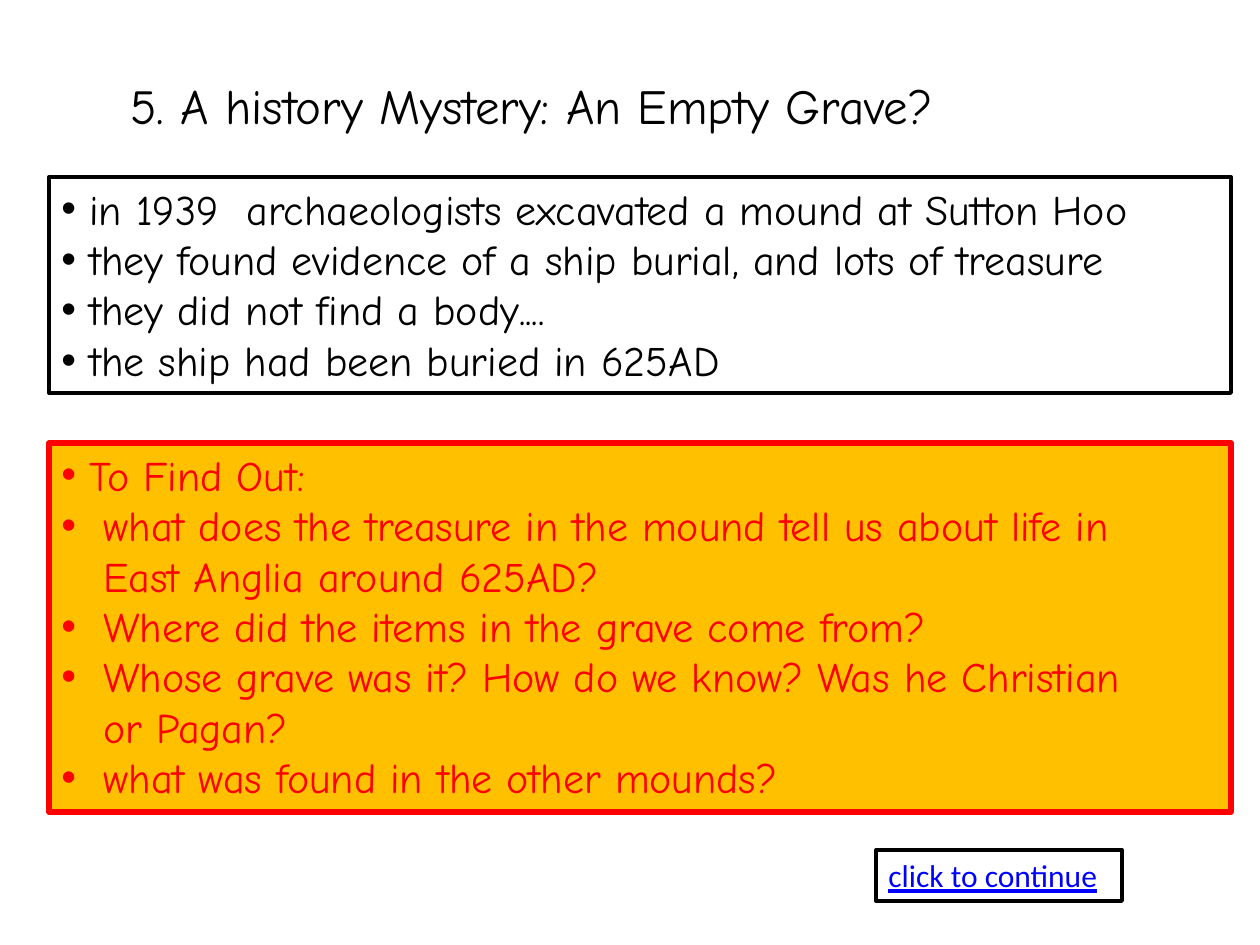
from lxml import etree
from pptx import Presentation
from pptx.dml.color import RGBColor
from pptx.enum.shapes import MSO_SHAPE
from pptx.enum.text import MSO_ANCHOR, PP_ALIGN
from pptx.oxml.ns import qn
from pptx.util import Emu, Pt

RECTANGLE = MSO_SHAPE.RECTANGLE
TOP = MSO_ANCHOR.TOP
LEFT = PP_ALIGN.LEFT

PX_PER_INCH = 126
BLACK, RED, AMBER, LINK_BLUE = "000000", "FF0000", "FFC000", "0000FF"
HAND_FONT, PLAIN_FONT = "Comic Neue", "Calibri"

FACTS = [
    "in 1939  archaeologists excavated a mound at Sutton Hoo",
    "they found evidence of a ship burial, and lots of treasure",
    "they did not find a body....",
    "the ship had been buried in 625AD",
]
QUESTIONS = [
    "what does the treasure in the mound tell us about life in\vEast Anglia around 625AD?",
    "Where did the items in the grave come from?",
    "Whose grave was it? How do we know? Was he Christian\vor Pagan?",
    "what was found in the other mounds?",
]


def px(length):
    """Turn a length in px into EMU."""
    return Emu(round(length * 914400 / PX_PER_INCH))


def colour(hex_string):
    """Turn a hex string into a colour."""
    return RGBColor.from_string(hex_string)


def style_text(frame, font, size, ink, underline=False):
    """Format every run of a text frame."""
    frame.word_wrap = True
    frame.vertical_anchor = TOP
    for para in frame.paragraphs:
        para.alignment = LEFT
        for span in para.runs:
            span.font.name = font
            span.font.size = Pt(size)
            span.font.color.rgb = colour(ink)
            span.font.underline = underline


def add_bullet(para, indent):
    """Give a paragraph a hanging round bullet."""
    properties = para._p.get_or_add_pPr()
    properties.set("marL", str(px(indent)))
    properties.set("indent", str(-px(indent)))
    etree.SubElement(properties, qn("a:buFont")).set("typeface", "Arial")
    etree.SubElement(properties, qn("a:buChar")).set("char", "•")


def add_panel(page, box, line, width, fill=None):
    """Add an outlined rectangle and return its text frame."""
    panel = page.shapes.add_shape(RECTANGLE, *map(px, box))
    panel.shadow.inherit = False
    panel.line.color.rgb = colour(line)
    panel.line.width = Pt(width)
    if fill:
        panel.fill.solid()
        panel.fill.fore_color.rgb = colour(fill)
    else:
        panel.fill.background()
    return panel.text_frame


def add_title(page, box, text):
    """Add the slide heading."""
    frame = page.shapes.add_textbox(*map(px, box)).text_frame
    frame.text = text
    style_text(frame, HAND_FONT, 28, BLACK)


def add_bullet_panel(page, box, items, ink, width, fill=None):
    """Add a panel of bullets from pairs of text and indent."""
    frame = add_panel(page, box, ink, width, fill)
    frame.text = "\n".join(text for text, _ in items)
    style_text(frame, HAND_FONT, 24, ink)
    for para, (_, indent) in zip(frame.paragraphs, items):
        add_bullet(para, indent)


def add_continue_button(page, box):
    """Add the button that leads on."""
    frame = add_panel(page, box, BLACK, 2.25)
    frame.text = "click to continue"
    style_text(frame, PLAIN_FONT, 18, LINK_BLUE, underline=True)


def main():
    """Build and save the slide."""
    deck = Presentation()
    deck.slide_width, deck.slide_height = px(1260), px(945)
    page = deck.slides.add_slide(deck.slide_layouts[6])
    facts = [(text, 28) for text in FACTS]
    questions = [("To Find Out:", 28)] + [(text, 42) for text in QUESTIONS]
    add_title(page, (118, 69, 955, 72), "5. A history Mystery: An Empty Grave?")
    add_bullet_panel(page, (49, 177, 1182, 216), facts, BLACK, 2.25)
    add_bullet_panel(page, (49, 443, 1182, 369), questions, RED, 3, AMBER)
    add_continue_button(page, (876, 850, 246, 51))
    deck.save("out.pptx")


if __name__ == "__main__":
    main()
